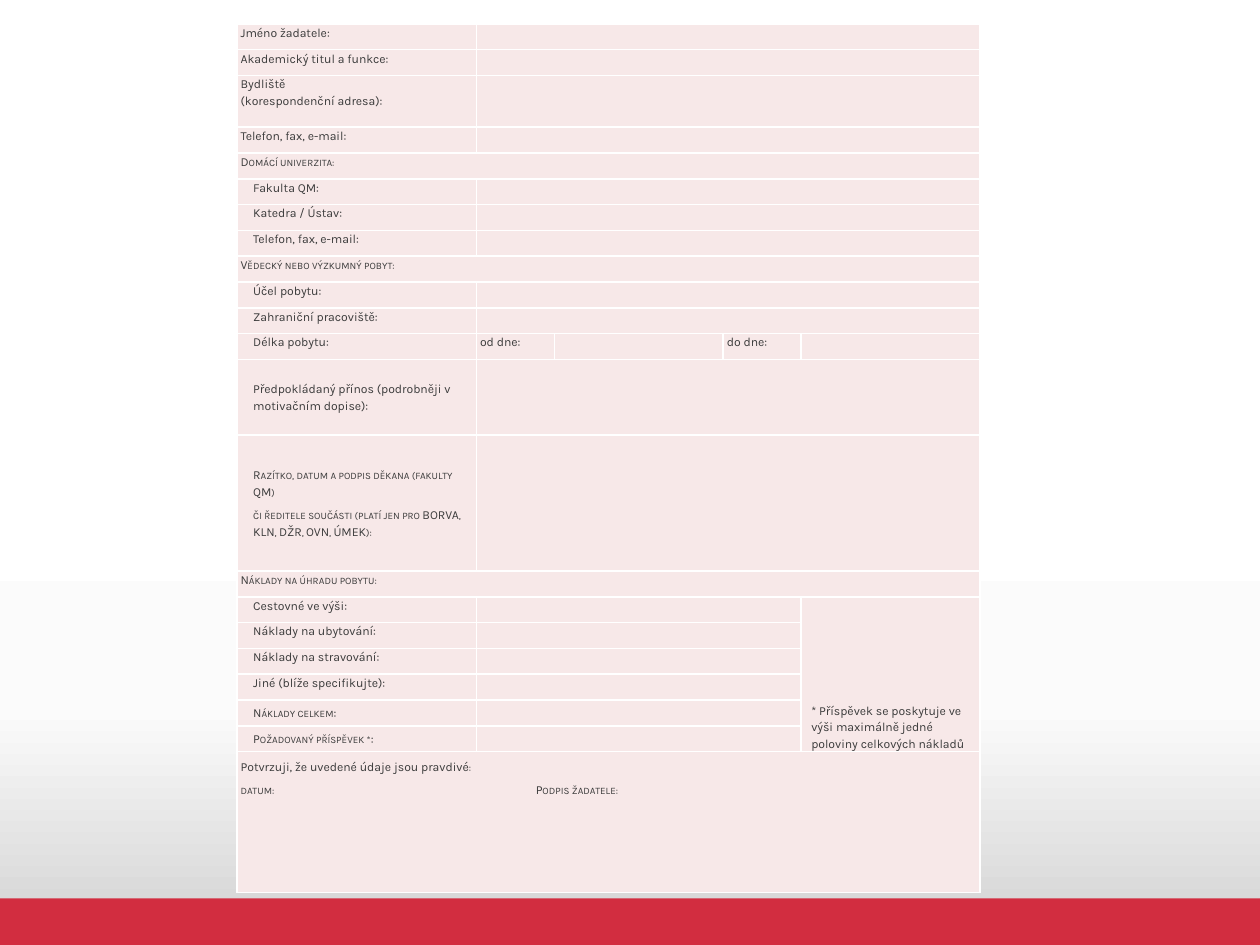
from copy import deepcopy
from lxml.etree import SubElement as Sub
from pptx import Presentation
from pptx.dml.color import RGBColor as Rgb
from pptx.enum.shapes import MSO_SHAPE as Kind
from pptx.enum.text import MSO_ANCHOR as Anchor
from pptx.oxml.ns import qn
from pptx.util import Inches, Pt

THEME = {
    "font": "Karla", "size": 7, "ink": "3C3C3C",
    "cell": "F7E8E8", "line": "FFFFFF", "bar": "D22D40",
    "back": [(0.48, "FFFFFF"), (0.75, "FBFBFB"), (1, "D1D1D1")],
}

# Rows: style, label, height (None = an equal share of what is left)
ROWS = [
    ("main", "Jméno žadatele:", None),
    ("main", "Akademický titul a funkce:", None),
    ("main", "Bydliště\n(korespondenční adresa):", 0.41),
    ("main", "Telefon, fax, e-mail:", None),
    ("head", "Domácí univerzita:", None),
    ("sub", "Fakulta QM:", None),
    ("sub", "Katedra / Ústav:", None),
    ("sub", "Telefon, fax, e-mail:", None),
    ("head", "Vědecký nebo výzkumný pobyt:", None),
    ("sub", "Účel pobytu:", None),
    ("sub", "Zahraniční pracoviště:", None),
    ("dates", "Délka pobytu:", None),
    ("mid", "Předpokládaný přínos (podrobněji v motivačním dopise):", 0.6),
    ("sign", ["Razítko, datum a podpis děkana (fakulty QM)",
              "či ředitele součásti (platí jen pro BORVA, KLN, DŽR, OVN, ÚMEK):"], 1.08),
    ("head", "Náklady na úhradu pobytu:", None),
    ("cost", "Cestovné ve výši:", None),
    ("cost", "Náklady na ubytování:", None),
    ("cost", "Náklady na stravování:", None),
    ("cost", "Jiné (blíže specifikujte):", None),
    ("sum", "Náklady celkem", None),
    ("sum", "Požadovaný příspěvek *", None),
    ("end", "", 1.12),
]
DATES = {1: "od dne:", 3: "do dne:"}
NOTE = "* Příspěvek se poskytuje ve výši maximálně jedné poloviny celkových nákladů"
VOW = "Potvrzuji, že uvedené údaje jsou pravdivé"
DAY, SIGN = "datum:", "Podpis žadatele:"

# First and last column of the merged cell, by style
WIDE = {"head": (0, 4), "end": (0, 4), "dates": None, "cost": (1, 3), "sum": (1, 3)}
COLS = [1.9, 0.62, 1.34, 0.62, 1.42]
LEFT, TOP, HIGH = 1.88, 0.19, 6.9


def ink(code):
    return Rgb.from_string(code)


def write(cell, *parts, small=(False,), indent=0, gap=2, after=2, more=False, wide=0):
    """Add one paragraph; small gives caps per part, wide stretches a lone space."""
    frame = cell.text_frame
    par = frame.add_paragraph() if more else frame.paragraphs[0]
    par.line_spacing = 1.15
    par.space_before, par.space_after = Pt(gap), Pt(after)
    props = par._p.get_or_add_pPr()
    props.set("marL", str(Inches(indent)))
    props.set("indent", "0")
    for part, caps in zip(parts, small):
        for i, line in enumerate(part.split("\n")):
            if i:
                par.add_line_break()
            run = par.add_run()
            run.text = line
            run.font.name, run.font.size = THEME["font"], Pt(THEME["size"])
            run.font.color.rgb = ink(THEME["ink"])
            if caps:
                run.font._element.set("cap", "small")
            if line == " ":
                run.font._element.set("spc", str(wide * 100))


def dress(cell):
    """Set fill, margins, borders and the type size of an empty cell."""
    cell.fill.solid()
    cell.fill.fore_color.rgb = ink(THEME["cell"])
    cell.margin_left = cell.margin_right = Inches(0.03)
    cell.margin_top = cell.margin_bottom = 0
    props = cell._tc.get_or_add_tcPr()
    for i, side in enumerate(("lnL", "lnR", "lnT", "lnB")):
        edge = Sub(props, qn("a:" + side), w=str(Pt(1)))
        fill = Sub(edge, qn("a:solidFill"))
        Sub(fill, qn("a:srgbClr"), val=THEME["line"])
        props.insert(i, edge)
    par = cell.text_frame.paragraphs[0]
    Sub(par._p, qn("a:endParaRPr"), sz=str(THEME["size"] * 100))


def label(cell, kind, text):
    """Write the first cell of a row in the style of its kind."""
    if kind == "end":
        cell.margin_top = Inches(0.05)
        write(cell, VOW, ":", small=(False, True), gap=0, after=0)
        write(cell, DAY, " ", SIGN, small=(True,) * 3, gap=4, after=0,
              more=True, wide=74)
        return
    if kind in ("mid", "sign", "sum"):
        cell.vertical_anchor = Anchor.MIDDLE
    tail = [":"] if kind == "sum" else []
    for i, line in enumerate(text if kind == "sign" else [text]):
        write(cell, line, *tail, small=(kind in ("head", "sign", "sum"), False),
              indent=0 if kind in ("main", "head") else 0.1, more=i > 0)


def paint(slide):
    """Fill the background and draw the bottom bar."""
    fill = slide.background.fill
    fill.gradient()
    fill.gradient_angle = 270
    stops = next(slide.element.iter(qn("a:gsLst")))
    stops.append(deepcopy(stops[-1]))
    for stop, (place, code) in zip(fill.gradient_stops, THEME["back"]):
        stop.position = place
        stop.color.rgb = ink(code)
    bar = slide.shapes.add_shape(Kind.RECTANGLE, 0, Inches(7.13), Inches(10), Inches(0.37))
    bar.shadow.inherit = False
    bar.fill.solid()
    bar.fill.fore_color.rgb = ink(THEME["bar"])
    bar.line.fill.background()


def form(slide):
    """Build the application form table."""
    grid = slide.shapes.add_table(len(ROWS), len(COLS), Inches(LEFT), Inches(TOP),
                                  Inches(sum(COLS)), Inches(HIGH)).table
    grid.first_row = grid.horz_banding = False
    for col, width in zip(grid.columns, COLS):
        col.width = Inches(width)
    tall = [high for _, _, high in ROWS if high]
    share = (HIGH - sum(tall)) / (len(ROWS) - len(tall))
    for cell in grid.iter_cells():
        dress(cell)
    for r, (kind, text, high) in enumerate(ROWS):
        grid.rows[r].height = Inches(high or share)
        label(grid.cell(r, 0), kind, text)
        span = WIDE.get(kind, (1, 4))
        if span:
            grid.cell(r, span[0]).merge(grid.cell(r, span[1]))
        else:
            for c, word in DATES.items():
                write(grid.cell(r, c), word)
    # Note beside the costs
    costs = [r for r, row in enumerate(ROWS) if row[0] in ("cost", "sum")]
    note = grid.cell(costs[0], 4)
    note.merge(grid.cell(costs[-1], 4))
    note.vertical_anchor = Anchor.BOTTOM
    write(note, NOTE, indent=0.05)


def main():
    deck = Presentation()
    deck.slide_width, deck.slide_height = Inches(10), Inches(7.5)
    slide = deck.slides.add_slide(deck.slide_layouts[6])
    paint(slide)
    form(slide)
    deck.save("out.pptx")


if __name__ == "__main__":
    main()
